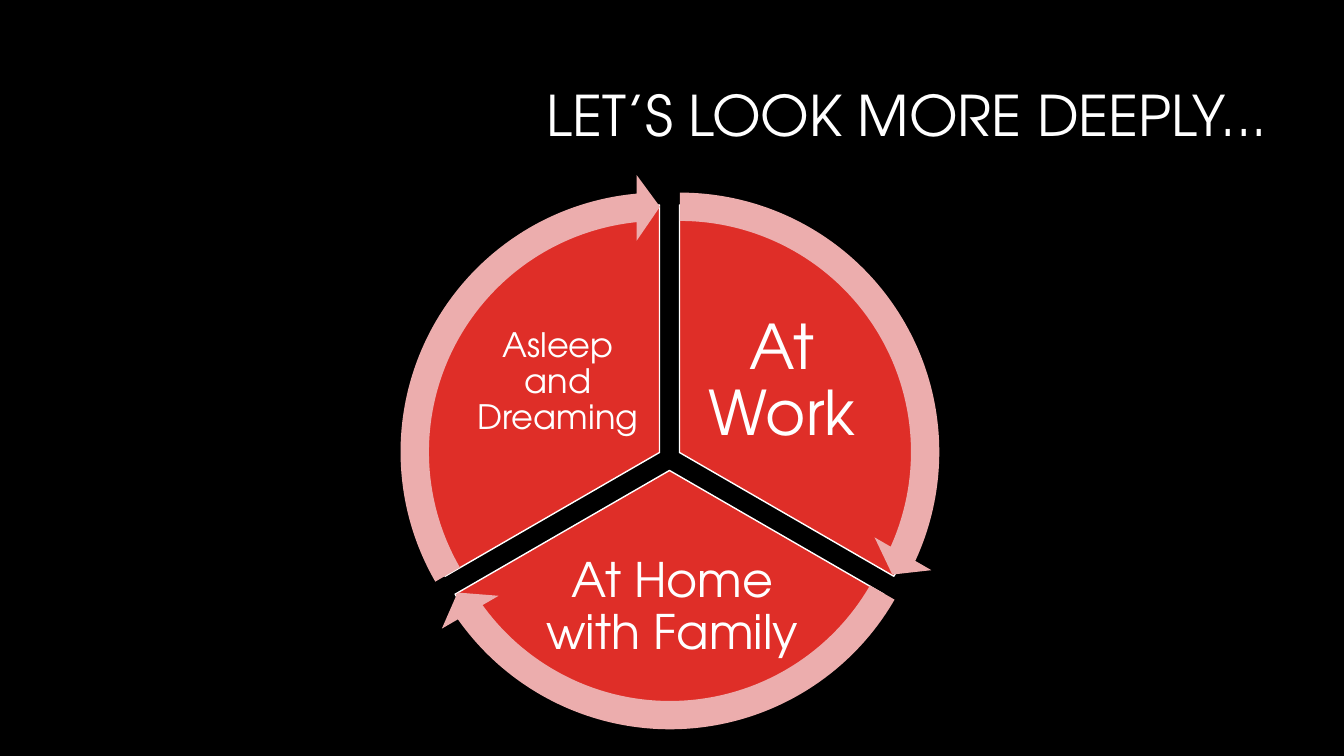
"""Build a slide with a three-part cycle of pie wedges and circular arrows."""
from pptx import Presentation
from pptx.dml.color import RGBColor
from pptx.enum.shapes import MSO_SHAPE
from pptx.enum.text import MSO_ANCHOR, MSO_AUTO_SIZE, PP_ALIGN
from pptx.util import Pt

PIE, CIRCULAR_ARROW = MSO_SHAPE.PIE, MSO_SHAPE.CIRCULAR_ARROW
CENTER, RIGHT = PP_ALIGN.CENTER, PP_ALIGN.RIGHT
MIDDLE, NO_AUTOFIT = MSO_ANCHOR.MIDDLE, MSO_AUTO_SIZE.NONE
EMU_PER_PX = 914400 / 100.8
TITLE_BOX = (343, 47, 950, 142)
WEDGE_SIZE, ARROW_SIZE = 495, 556
ARROW_OFFSET = (ARROW_SIZE - WEDGE_SIZE) // 2


def px(*lengths):
    return [round(length * EMU_PER_PX) for length in lengths]


def write(holder, words, size, align, inset):
    frame = holder.text_frame
    frame.text = words
    margin_x, margin_y = px(*inset)
    frame_format = {
        "word_wrap": True, "auto_size": NO_AUTOFIT, "vertical_anchor": MIDDLE,
        "margin_left": margin_x, "margin_right": margin_x,
        "margin_top": margin_y, "margin_bottom": margin_y,
    }
    for key, value in frame_format.items():
        setattr(frame, key, value)
    paragraph = frame.paragraphs[0]
    paragraph.alignment = align
    paragraph.line_spacing = 0.9
    font = paragraph.runs[0].font
    for key, value in {"name": "TeX Gyre Adventor", "size": Pt(size), "bold": False}.items():
        setattr(font, key, value)
    font.color.rgb = RGBColor.from_string("FFFFFF")


deck = Presentation()
deck.slide_width, deck.slide_height = px(1344, 756)
slide = deck.slides.add_slide(deck.slide_layouts[5])
slide.background.fill.solid()
slide.background.fill.fore_color.rgb = RGBColor.from_string("000000")

title = slide.shapes.title
title.left, title.top, title.width, title.height = px(*TITLE_BOX)
write(title, "LET’S LOOK MORE DEEPLY... ", 40, RIGHT, (10, 5))

stages = [
    ("At Work", 44, 6, (694, 309, 176, 147), (432, 205), (162, 18), (14.725, 161.994)),
    ("At Home with Family", 34, 5, (540, 543, 265, 130), (422, 223), (18, 90), (86.72, 18.005)),
    ("Asleep and Dreaming", 24, 3, (470, 309, 176, 147), (412, 205), (90, 162), (158.73, 90)),
]

for words, size, inset, label_box, corner, wedge_angles, arrow_angles in stages:
    wedge = slide.shapes.add_shape(PIE, *px(*corner, WEDGE_SIZE, WEDGE_SIZE))
    wedge.shadow.inherit = False
    for index, angle in enumerate(wedge_angles):
        wedge.adjustments[index] = angle
    wedge.fill.solid()
    wedge.fill.fore_color.rgb = RGBColor.from_string("DF2E28")
    wedge.line.color.rgb = RGBColor.from_string("FFFFFF")
    wedge.line.width = Pt(1)
    label = slide.shapes.add_textbox(*px(*label_box))
    write(label, words, size, CENTER, (inset, inset))

for words, size, inset, label_box, (left, top), wedge_angles, arrow_angles in stages:
    arrow = slide.shapes.add_shape(
        CIRCULAR_ARROW, *px(left - ARROW_OFFSET, top - ARROW_OFFSET - 1, ARROW_SIZE, ARROW_SIZE))
    arrow.shadow.inherit = False
    for index, value in enumerate((0.051, 3.275, *arrow_angles, 0.059)):
        arrow.adjustments[index] = value
    arrow.fill.solid()
    arrow.fill.fore_color.rgb = RGBColor.from_string("ECADAD")
    arrow.line.fill.background()

deck.save("out.pptx")
